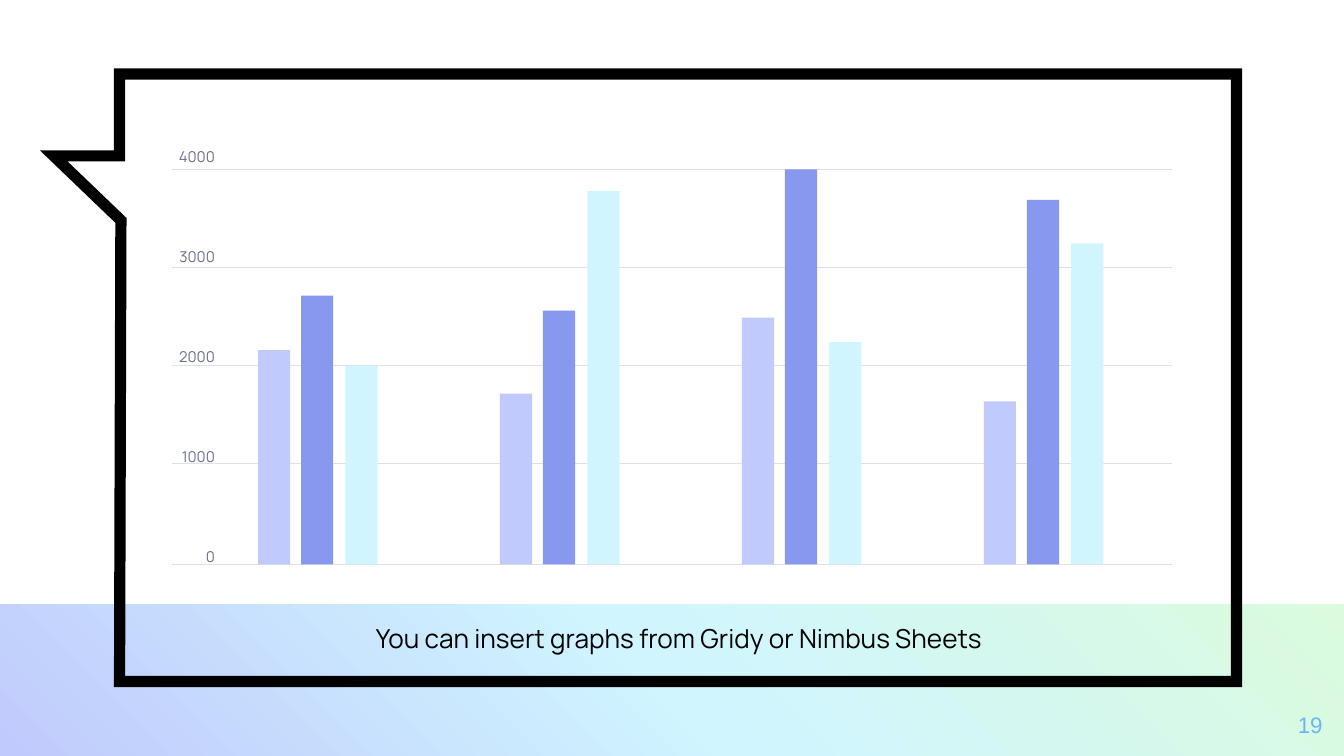
"""Build a slide with a grouped bar graph inside a speech-bubble frame."""
from copy import deepcopy

from pptx import Presentation
from pptx import util as u
from pptx.dml.color import RGBColor
from pptx.enum import shapes, text
from pptx.oxml import ns
from pptx.oxml.xmlchemy import OxmlElement

COLORS = {
    "lilac": "C0CAFC", "blue": "8798EE", "cyan": "D0F5FF", "mint": "DAFBDD",
    "black": "000000", "grid": "DEE1EC", "label": "6A708D", "number": "6DB4F5",
}
Inches = u.Inches
LEFT, RIGHT, TOP, BASE = 1.28, 8.72, 1.26, 4.2


def color(name):
    return RGBColor.from_string(COLORS[name])


def add_text(box, lines, size, font, ink, align, inset=0.1):
    left, top, width, height = map(Inches, box)
    frame = slide.shapes.add_textbox(left, top, width, height).text_frame
    frame.word_wrap = True
    frame.margin_left = frame.margin_right = Inches(inset)
    frame.margin_top = frame.margin_bottom = Inches(inset)
    frame.text = "\n".join(lines)
    for paragraph in frame.paragraphs:
        paragraph.alignment = align
        paragraph.font.size = u.Pt(size)
        paragraph.font.name = font
        paragraph.font.color.rgb = color(ink)
    return frame


prs = Presentation()
prs.slide_width, prs.slide_height = Inches(10), Inches(10 * 9 / 16)
slide = prs.slides.add_slide(prs.slide_layouts[6])

band_top = Inches(4.5)
band = slide.shapes.add_shape(
    shapes.MSO_SHAPE.RECTANGLE, 0, band_top, prs.slide_width, prs.slide_height - band_top)
band.shadow.inherit = False
band.line.fill.background()
band.fill.gradient()
band.fill.gradient_angle = 45
stop_list = band._element.spPr.find(ns.qn("a:gradFill")).find(ns.qn("a:gsLst"))
stop_list.append(deepcopy(stop_list[-1]))
for stop, position, name in zip(
        band.fill.gradient_stops, (0, 0.5, 1), ("lilac", "cyan", "mint")):
    stop.position = position
    stop.color.rgb = color(name)

outline = slide.shapes.build_freeform(Inches(0.89), Inches(0.55))
outline.add_line_segments([
    (Inches(x), Inches(y)) for x, y in (
        (9.2, 0.55), (9.2, 5.07), (0.89, 5.07),
        (0.9, 1.64), (0.4, 1.16), (0.89, 1.16))], close=True)
bubble = outline.convert_to_shape()
bubble.shadow.inherit = False
bubble.fill.background()
bubble.line.color.rgb = color("black")
bubble.line.width = u.Pt(6)
miter = OxmlElement("a:miter")
miter.set("lim", "800000")
bubble.line._get_or_add_ln().append(miter)

caption = add_text(
    (0.9, 4.47, 8.31, 0.56), ["You can insert graphs from Gridy or Nimbus Sheets"],
    14, "Manrope", "black", text.PP_ALIGN.CENTER)
caption.vertical_anchor = text.MSO_ANCHOR.MIDDLE
caption.paragraphs[0].space_before = u.Pt(3.6)

add_text((9.34, 5.19, 0.6, 0.43), ["19"], 12, "Arial", "number", text.PP_ALIGN.RIGHT)

for y in (TOP, 1.99, 2.72, 3.45, BASE):
    gridline = slide.shapes.add_connector(
        shapes.MSO_CONNECTOR.STRAIGHT, Inches(LEFT), Inches(y), Inches(RIGHT), Inches(y))
    gridline.line.color.rgb = color("grid")
    gridline.line.width = u.Pt(0.75)
    gridline._element.spPr.append(OxmlElement("a:effectLst"))

scale = add_text(
    (LEFT, 1.1, 0.32, 3.11), [str(value) for value in range(4000, -1, -1000)],
    8, "Manrope", "label", text.PP_ALIGN.RIGHT, inset=0)
for paragraph in scale.paragraphs[1:]:
    paragraph.space_before = u.Pt(44)
scale.paragraphs[-1].space_after = u.Pt(44)

groups = [
    (2170, 2720, 2010),
    (1730, 2570, 3780),
    (2500, 4000, 2250),
    (1650, 3690, 3250),
]
series = (("lilac", 0), ("blue", 0.32), ("cyan", 0.65))
for group, values in enumerate(groups):
    for value, (name, offset) in zip(values, series):
        height = value / 4000 * (BASE - TOP)
        bar = slide.shapes.add_shape(
            shapes.MSO_SHAPE.RECTANGLE,
            Inches(1.92 + 1.8 * group + offset), Inches(BASE - height),
            Inches(0.24), Inches(height))
        bar.shadow.inherit = False
        bar.fill.solid()
        bar.fill.fore_color.rgb = color(name)
        bar.line.fill.background()

prs.save("out.pptx")
